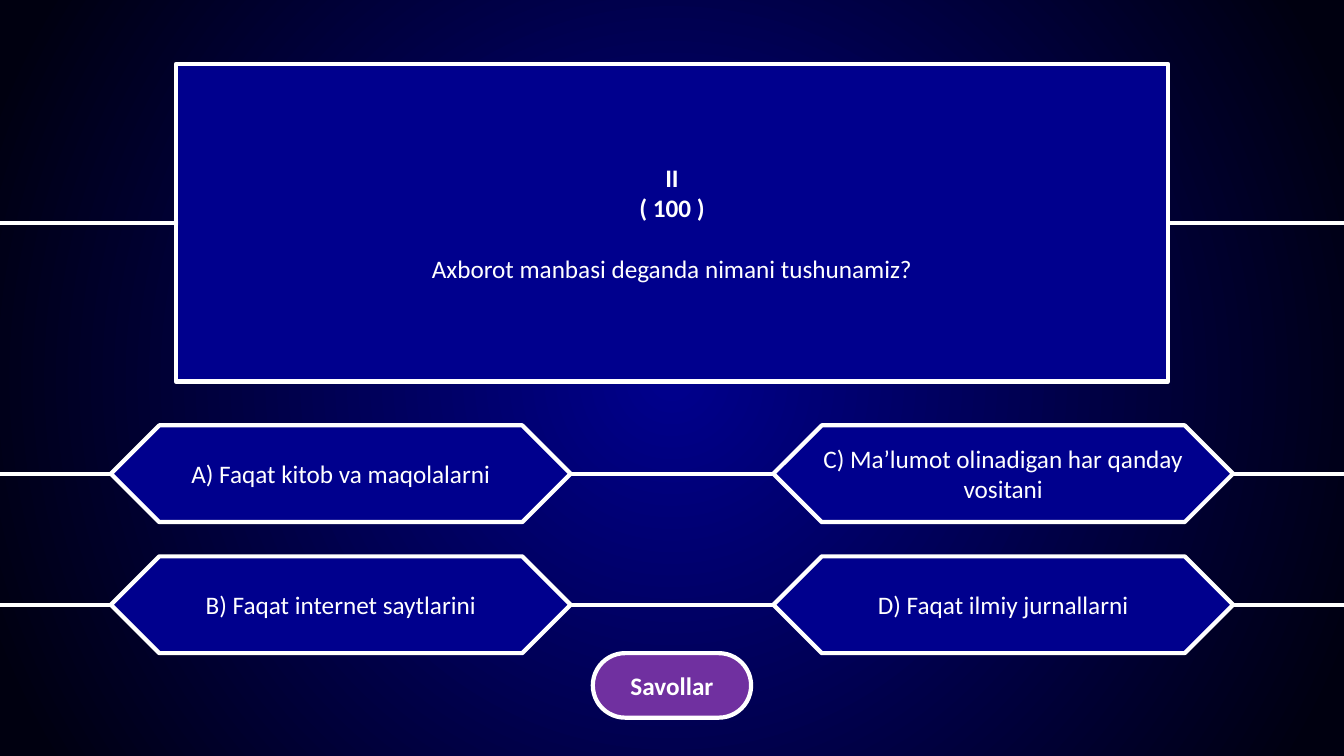
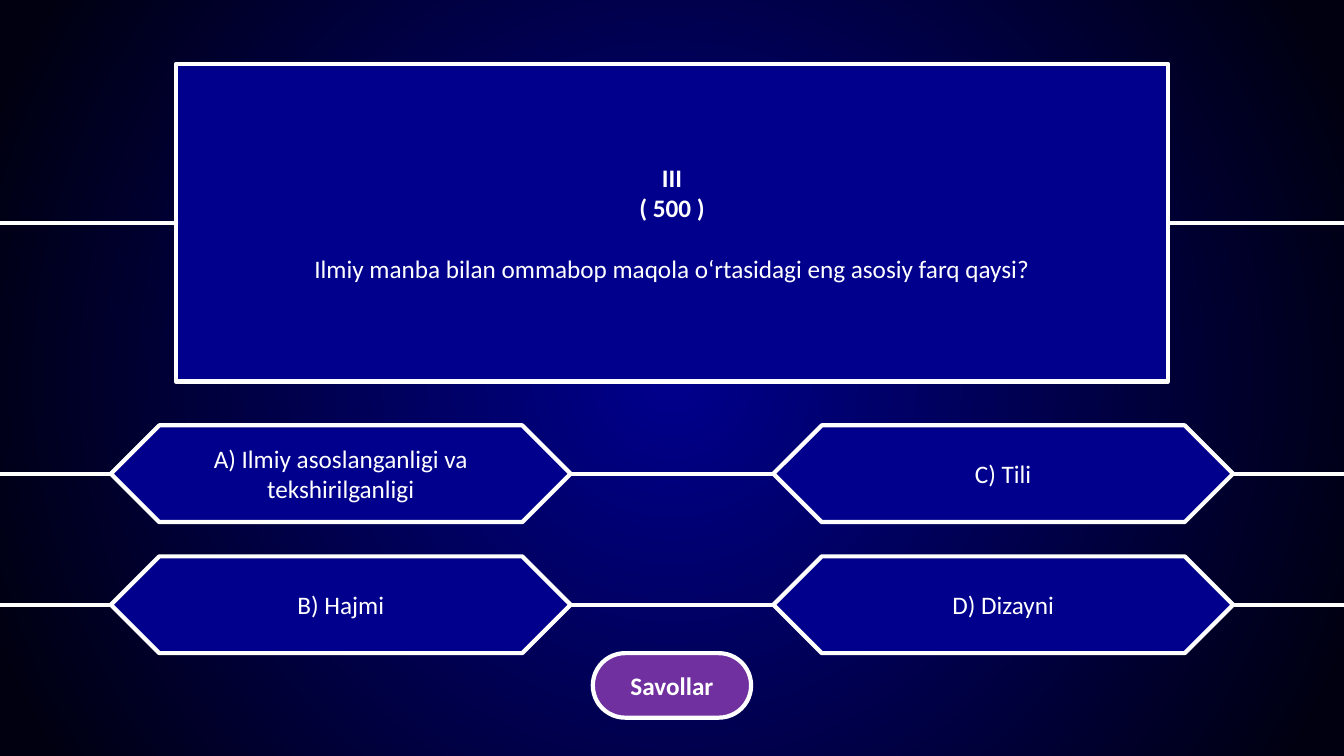
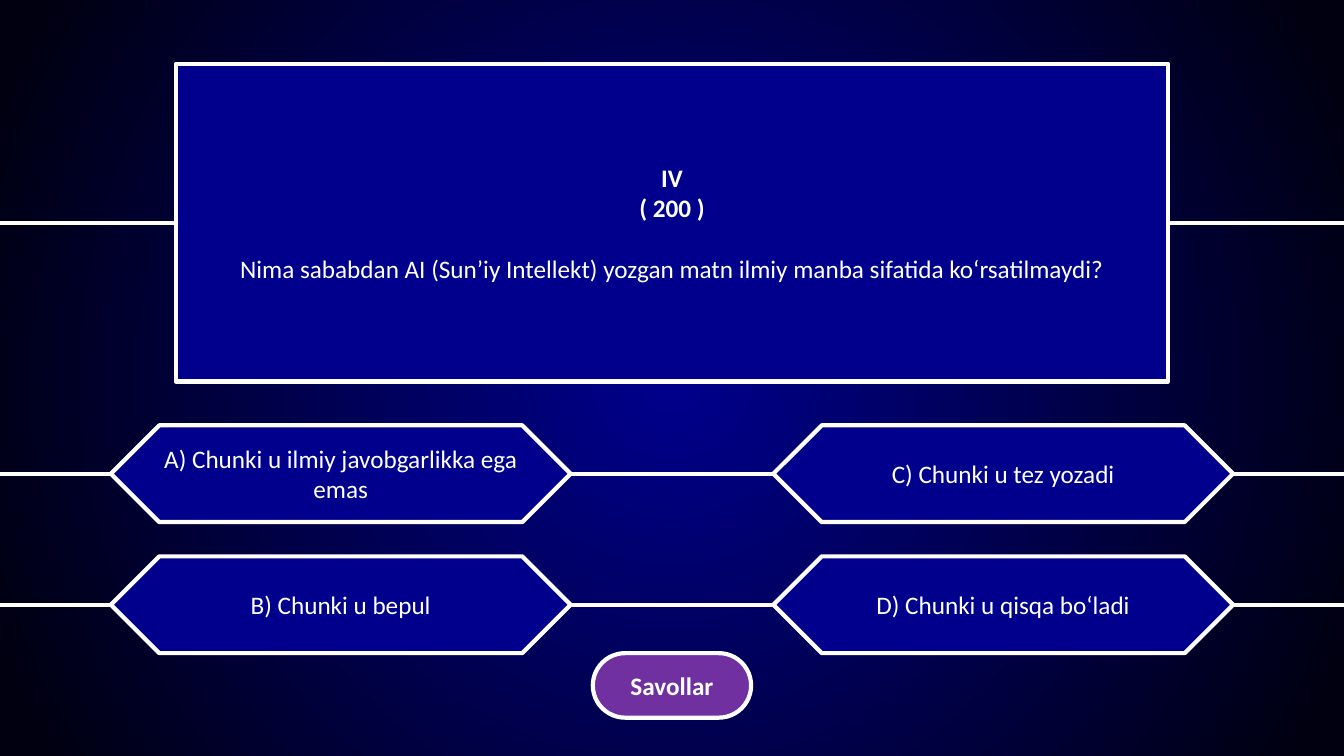
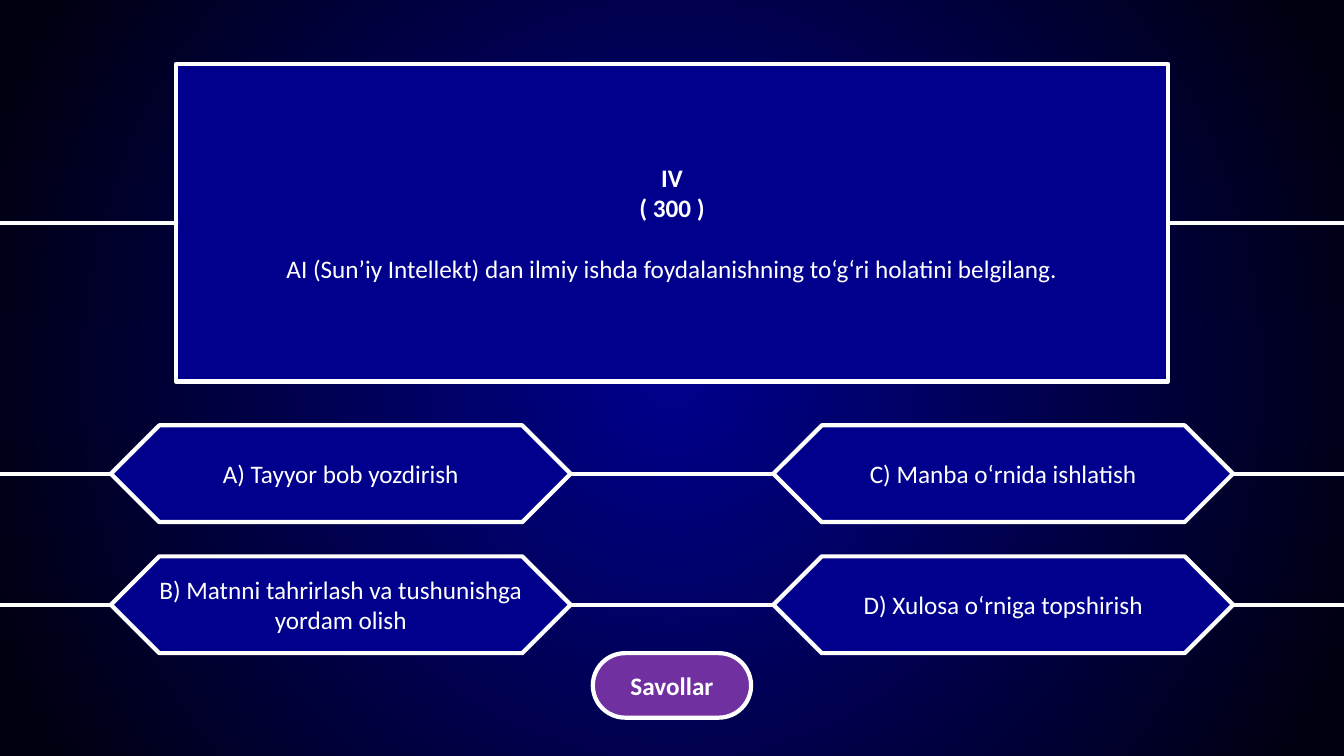
from dataclasses import dataclass

from lxml.etree import SubElement
from pptx import Presentation
from pptx.dml.color import RGBColor
from pptx.enum.shapes import MSO_CONNECTOR, MSO_SHAPE
from pptx.enum.text import MSO_ANCHOR, MSO_AUTO_SIZE, PP_ALIGN
from pptx.oxml import parse_xml
from pptx.oxml.ns import nsdecls, qn
from pptx.util import Inches, Pt


@dataclass(frozen=True)
class Theme:
    blue: RGBColor = RGBColor.from_string("00008D")
    night: RGBColor = RGBColor.from_string("000010")
    white: RGBColor = RGBColor.from_string("FFFFFF")
    purple: RGBColor = RGBColor.from_string("7030A0")
    spark_line: RGBColor = RGBColor.from_string("325491")
    font: str = "Calibri"
    text_size: int = 18
    line_width: int = 3
    question_gap: int = 22


# Layout, in inches
WIDTH, HEIGHT = 13.33, 7.5
MIDDLE = WIDTH / 2
QUESTION_Y, QUESTION_SIZE = 2.21, (9.84, 3.15)
ANSWER_SIZE = (4.56, 0.96)
ANSWER_MARGIN = 1.1
COLUMN_CENTERS = [ANSWER_MARGIN + ANSWER_SIZE[0] / 2,
                  WIDTH - ANSWER_MARGIN - ANSWER_SIZE[0] / 2]
ROW_CENTERS = [4.7, 6.0]
BUTTON_Y, BUTTON_SIZE = 6.8, (1.57, 0.64)
SPARKS = [(0.3, 8), (0.1, 2.5)]  # diameter, soft edge in points

# Round, points, question, answers A to D
QUESTIONS = [
    ("II", "( 100 )", "Axborot manbasi deganda nimani tushunamiz?",
     ["A) Faqat kitob va maqolalarni", "B) Faqat internet saytlarini",
      "C) Ma’lumot olinadigan har qanday vositani",
      "D) Faqat ilmiy jurnallarni"]),
    ("III", "( 500 )",
     "Ilmiy manba bilan ommabop maqola o‘rtasidagi eng asosiy farq qaysi?",
     ["A) Ilmiy asoslanganligi va tekshirilganligi", "B) Hajmi",
      "C) Tili", "D) Dizayni"]),
    ("IV", "( 200 )",
     "Nima sababdan AI (Sun’iy Intellekt) yozgan matn ilmiy manba sifatida "
     "ko‘rsatilmaydi?",
     ["A) Chunki u ilmiy javobgarlikka ega emas", "B) Chunki u bepul",
      "C) Chunki u tez yozadi", "D) Chunki u qisqa bo‘ladi"]),
    ("IV", "( 300 )",
     "AI (Sun’iy Intellekt) dan ilmiy ishda foydalanishning to‘g‘ri holatini "
     "belgilang.",
     ["A) Tayyor bob yozdirish",
      "B) Matnni tahrirlash va tushunishga yordam olish",
      "C) Manba o‘rnida ishlatish", "D) Xulosa o‘rniga topshirish"]),
]


class QuizDeck:
    def __init__(self, theme):
        self.theme = theme
        self.presentation = Presentation()
        self.presentation.slide_width = Inches(WIDTH)
        self.presentation.slide_height = Inches(HEIGHT)
        self.slide = None
        self.set_background()

    def set_background(self):
        """Give the master a radial gradient that every slide inherits."""
        master = self.presentation.slide_master
        fill = master.background.fill
        fill.gradient()
        stops = zip(fill.gradient_stops, (self.theme.blue, self.theme.night), (0, 0.95))
        for stop, color, position in stops:
            stop.color.rgb = color
            stop.position = position
        gradient = master.element.find(".//" + qn("a:gradFill"))
        gradient.replace(gradient.find(qn("a:lin")), parse_xml(
            f'<a:path {nsdecls("a")} path="circle">'
            '<a:fillToRect l="50000" t="50000" r="50000" b="50000"/></a:path>'))

    def add_slide(self):
        layout = self.presentation.slide_layouts.get_by_name("Title Only")
        self.slide = self.presentation.slides.add_slide(layout)

    def place(self, shape, center, size):
        shape.left, shape.top = (Inches(c - s / 2) for c, s in zip(center, size))
        shape.width, shape.height = (Inches(s) for s in size)

    def paint(self, shape, fill, line=None, line_width=None):
        shape.fill.solid()
        shape.fill.fore_color.rgb = fill
        shape.line.color.rgb = line or self.theme.white
        shape.line.width = Pt(line_width or self.theme.line_width)

    def set_text(self, shape, lines):
        """Fill a shape with centred (text, bold, space before) lines."""
        frame = shape.text_frame
        frame.word_wrap = True
        frame.auto_size = MSO_AUTO_SIZE.NONE
        frame.vertical_anchor = MSO_ANCHOR.MIDDLE
        for index, (text, bold, gap) in enumerate(lines):
            paragraph = frame.add_paragraph() if index else frame.paragraphs[0]
            paragraph.text = text
            paragraph.alignment = PP_ALIGN.CENTER
            paragraph.space_before = Pt(gap)
            font = paragraph.font
            font.name, font.size, font.bold = self.theme.font, Pt(self.theme.text_size), bold
            font.color.rgb = self.theme.white

    def shape(self, kind, center, size, fill, **line_style):
        shape = self.slide.shapes.add_shape(kind, 0, 0, 0, 0)
        shape.shadow.inherit = False
        self.place(shape, center, size)
        self.paint(shape, fill, **line_style)
        return shape

    def rail(self, y):
        line = self.slide.shapes.add_connector(
            MSO_CONNECTOR.STRAIGHT, Inches(WIDTH), Inches(y), 0, Inches(y))
        line.line.color.rgb = self.theme.white
        line.line.width = Pt(self.theme.line_width)
        SubElement(line._element.spPr, qn("a:effectLst"))

    def answer(self, text, center):
        shape = self.shape(MSO_SHAPE.SNIP_2_DIAG_RECTANGLE, center, ANSWER_SIZE,
                           self.theme.blue)
        shape.adjustments[0] = shape.adjustments[1] = 0.5
        self.set_text(shape, [(text, False, 0)])

    def question(self, round_name, points, text):
        """Turn the title placeholder into the large hexagon, above its rail."""
        title = self.slide.shapes.title
        self.place(title, (MIDDLE, QUESTION_Y), QUESTION_SIZE)
        title.element.spPr.append(parse_xml(
            f'<a:prstGeom {nsdecls("a")} prst="snip2DiagRect"><a:avLst>'
            '<a:gd name="adj1" fmla="val 50000"/><a:gd name="adj2" fmla="val 50000"/>'
            '</a:avLst></a:prstGeom>'))
        self.paint(title, self.theme.blue)
        self.set_text(title, [(round_name, True, 0), (points, True, 0),
                              (text, False, self.theme.question_gap)])
        title.element.getparent().append(title.element)

    def spark(self, center, diameter, softness):
        dot = self.shape(MSO_SHAPE.OVAL, center, (diameter, diameter), self.theme.white,
                         line=self.theme.spark_line, line_width=1)
        effects = dot.element.spPr.find(qn("a:effectLst"))
        SubElement(effects, qn("a:softEdge"), rad=str(int(Pt(softness))))

    def button(self, text):
        shape = self.shape(MSO_SHAPE.ROUNDED_RECTANGLE, (MIDDLE, BUTTON_Y), BUTTON_SIZE,
                           self.theme.purple)
        shape.adjustments[0] = 0.5
        self.set_text(shape, [(text, True, 0)])


def main():
    deck = QuizDeck(Theme())
    cells = [(x, y) for x in COLUMN_CENTERS for y in ROW_CENTERS]
    question_tip = (MIDDLE - QUESTION_SIZE[0] / 2, QUESTION_Y)
    for round_name, points, text, answers in QUESTIONS:
        deck.add_slide()
        # Rails behind the hexagons
        for y in [*ROW_CENTERS, QUESTION_Y]:
            deck.rail(y)
        # Answers, column by column
        for answer, center in zip(answers, cells):
            deck.answer(answer, center)
        # Question with the glow on its left tip
        deck.question(round_name, points, text)
        for diameter, softness in SPARKS:
            deck.spark(question_tip, diameter, softness)
        deck.button("Savollar")
    deck.presentation.save("out.pptx")


if __name__ == "__main__":
    main()
